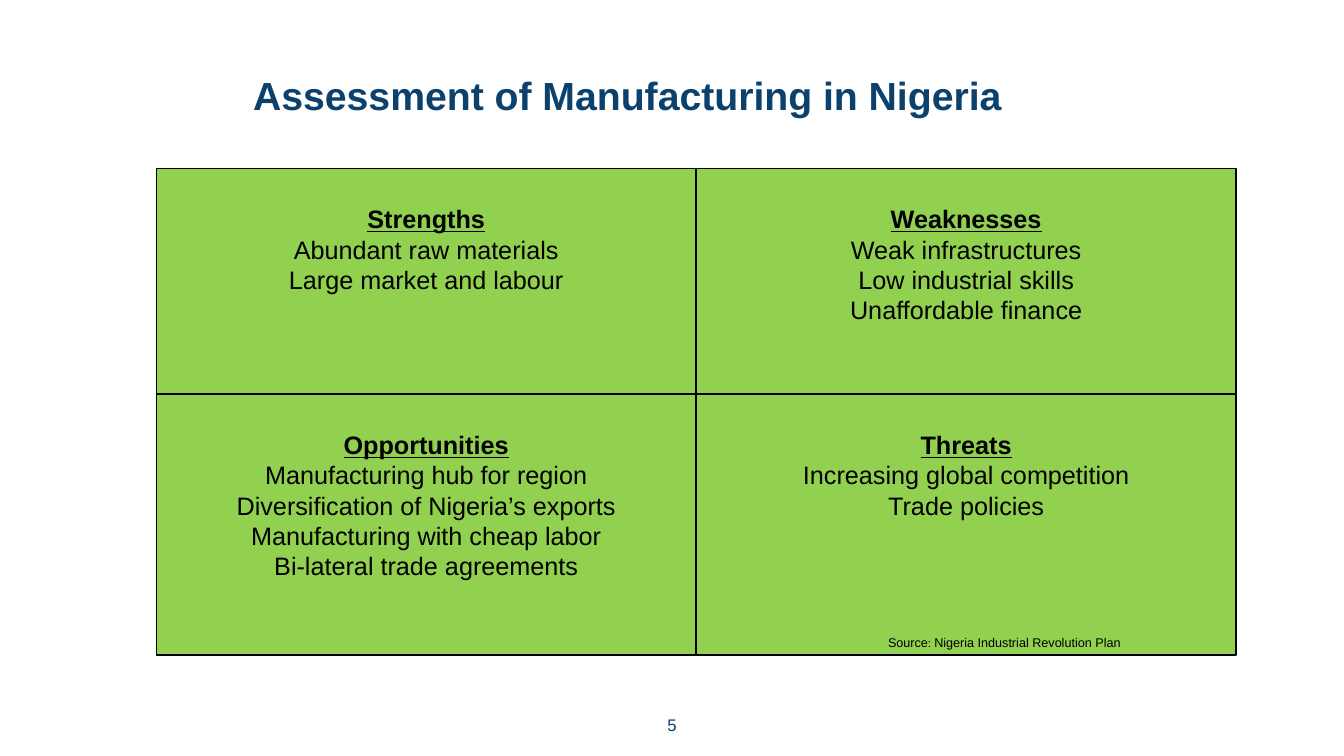
from dataclasses import dataclass

from pptx import Presentation
from pptx.dml.color import RGBColor
from pptx.enum import shapes, text
from pptx.util import Inches, Pt

NAVY = RGBColor(0x0C, 0x40, 0x6D)
GREEN = RGBColor(0x92, 0xD0, 0x50)
BLACK = RGBColor(0, 0, 0)
LEFT, TOP = 1.55, 1.67
COL_W = 5.355
ROW_H = (2.24, 2.59)
CENTER = text.PP_ALIGN.CENTER
MIDDLE = text.MSO_ANCHOR.MIDDLE


@dataclass
class Quadrant:
    heading: str
    points: tuple[str, ...]


SWOT = (
    Quadrant("Strengths", ("Abundant raw materials", "Large market and labour")),
    Quadrant("Weaknesses", ("Weak infrastructures", "Low industrial skills",
                            "Unaffordable finance")),
    Quadrant("Opportunities", ("Manufacturing hub for region",
                               "Diversification of Nigeria’s exports",
                               "Manufacturing with cheap labor",
                               "Bi-lateral trade agreements")),
    Quadrant("Threats", ("Increasing global competition", "Trade policies")),
)


def set_attrs(target, values: dict) -> None:
    for name, value in values.items():
        setattr(target, name, value)


def add_run(p, words: str, size: float, color: RGBColor = BLACK, **formats) -> None:
    r = p.add_run()
    r.text = words
    set_attrs(r.font, {"name": "Arial", "size": Pt(size), **formats})
    r.font.color.rgb = color


def place(sp, left: float, top: float, width: float, height: float) -> None:
    set_attrs(sp, {"left": Inches(left), "top": Inches(top),
                   "width": Inches(width), "height": Inches(height)})


def add_label(s, left: float, top: float, width: float, height: float, **frame):
    sp = s.shapes.add_textbox(Inches(left), Inches(top), Inches(width), Inches(height))
    set_attrs(sp.text_frame, {"word_wrap": True, **frame})
    return sp.text_frame.paragraphs[0]


def add_title(s, words: str) -> None:
    sp = s.shapes.title
    place(sp, 2.41, 0.7, 8.11, 0.55)
    set_attrs(sp.text_frame, {"vertical_anchor": MIDDLE, "word_wrap": True,
                              "auto_size": text.MSO_AUTO_SIZE.NONE})
    p = sp.text_frame.paragraphs[0]
    set_attrs(p, {"alignment": text.PP_ALIGN.LEFT, "line_spacing": 0.9})
    add_run(p, words, 28, NAVY, bold=True)


def add_quadrant(s, quadrant: Quadrant, row: int, col: int) -> None:
    sp = s.shapes.add_shape(
        shapes.MSO_SHAPE.RECTANGLE, Inches(LEFT + col * COL_W),
        Inches(TOP + sum(ROW_H[:row])), Inches(COL_W), Inches(ROW_H[row]))
    sp.shadow.inherit = False
    sp.fill.solid()
    sp.fill.fore_color.rgb = GREEN
    sp.line.color.rgb = BLACK
    sp.line.width = Pt(1)
    tf = sp.text_frame
    set_attrs(tf, {"word_wrap": True, "vertical_anchor": text.MSO_ANCHOR.TOP,
                   "margin_top": Inches(0.35)})
    for i, words in enumerate((quadrant.heading, *quadrant.points)):
        p = tf.add_paragraph() if i else tf.paragraphs[0]
        p.alignment = CENTER
        add_run(p, words, 18, bold=i == 0, underline=i == 0)


def main() -> None:
    prs = Presentation()
    set_attrs(prs, {"slide_width": Inches(13.33), "slide_height": Inches(7.5)})
    s = prs.slides.add_slide(prs.slide_layouts.get_by_name("Title Only"))
    add_title(s, "Assessment of Manufacturing in Nigeria")
    for i, quadrant in enumerate(SWOT):
        add_quadrant(s, quadrant, *divmod(i, 2))

    p = add_label(s, 8.71, 6.25, 2.54, 0.25)
    for words, size in (("Source", 9), (": ", 8),
                        ("Nigeria Industrial Revolution Plan", 9)):
        add_run(p, words, size)

    p = add_label(s, 6.39, 7.01, 0.55, 0.36, vertical_anchor=MIDDLE)
    p.alignment = CENTER
    add_run(p, "5", 12, NAVY)
    prs.save("out.pptx")


if __name__ == "__main__":
    main()
